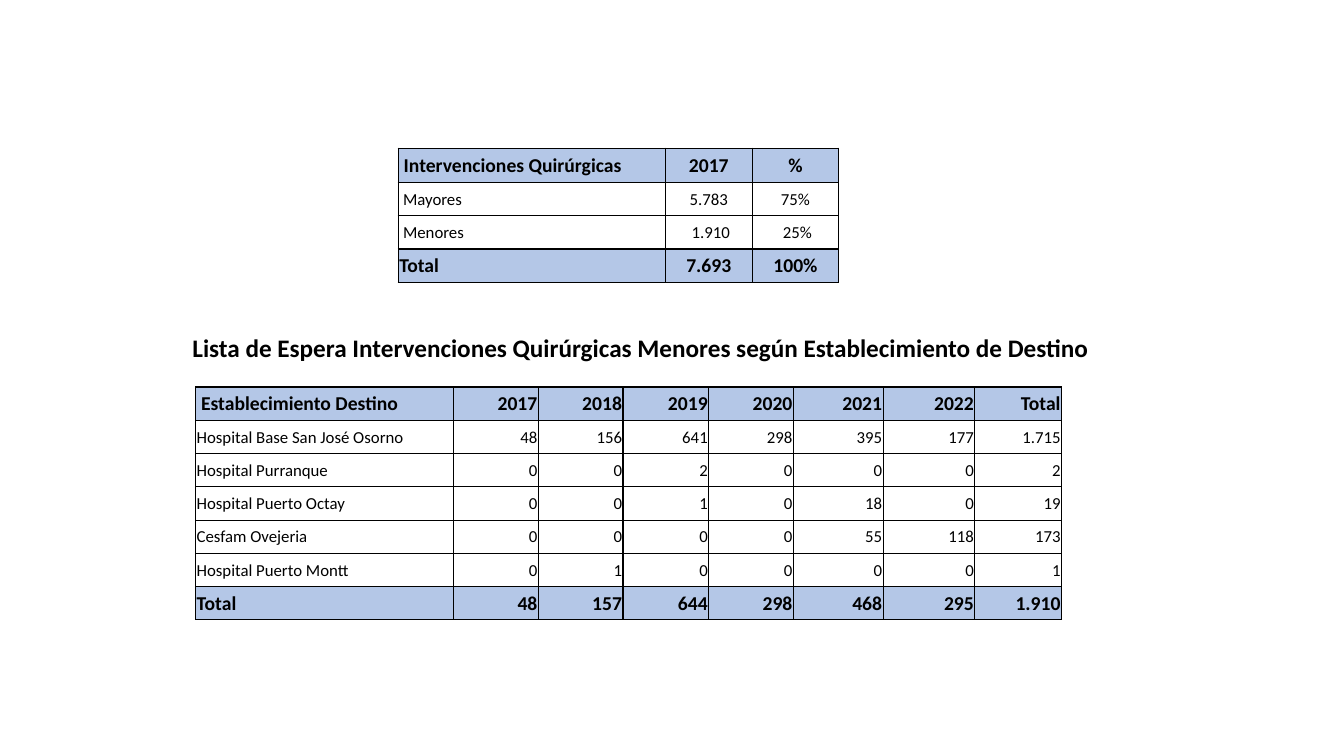
from dataclasses import dataclass

import pptx
import pptx.dml.color
import pptx.enum.text
import pptx.oxml
import pptx.oxml.ns
import pptx.slide
import pptx.table
import pptx.util
from pptx.util import Inches

BLACK = pptx.dml.color.RGBColor(0x00, 0x00, 0x00)
LIGHT_BLUE = pptx.dml.color.RGBColor(0xB4, 0xC7, 0xE7)
FONT = "Calibri"
ALIGN = pptx.enum.text.PP_ALIGN
ROW_HEIGHT = 0.33


@dataclass(frozen=True)
class SummaryTable:
    left: float
    top: float
    column_widths: list[float]
    header_height: float
    figure_align: pptx.enum.text.PP_ALIGN
    rows: list[list[str]]


INTERVENTIONS = SummaryTable(
    left=3.95,
    top=1.47,
    column_widths=[2.65, 0.86, 0.86],
    header_height=0.34,
    figure_align=ALIGN.CENTER,
    rows=[
        [" Intervenciones Quirúrgicas", "2017", "%"],
        [" Mayores", "5.783", "75%"],
        [" Menores", " 1.910", " 25%"],
        ["Total", "7.693", "100%"],
    ],
)

WAITING_LIST = SummaryTable(
    left=1.94,
    top=3.84,
    column_widths=[2.56, 0.84, 0.84, 0.85, 0.84, 0.89, 0.91, 0.86],
    header_height=ROW_HEIGHT,
    figure_align=ALIGN.RIGHT,
    rows=[
        [" Establecimiento Destino", "2017", "2018", "2019", "2020", "2021", "2022", "Total"],
        ["Hospital Base San José Osorno", "48", "156", "641", "298", "395", "177", "1.715"],
        ["Hospital Purranque", "0", "0", "2", "0", "0", "0", "2"],
        ["Hospital Puerto Octay", "0", "0", "1", "0", "18", "0", "19"],
        ["Cesfam Ovejeria", "0", "0", "0", "0", "55", "118", "173"],
        ["Hospital Puerto Montt", "0", "1", "0", "0", "0", "0", "1"],
        ["Total", "48", "157", "644", "298", "468", "295", "1.910"],
    ],
)


def style_font(font: pptx.text.text.Font, size: float, bold: bool) -> None:
    font.name = FONT
    font.size = pptx.util.Pt(size)
    font.bold = bold
    font.color.rgb = BLACK


def add_borders(cell: pptx.table._Cell) -> None:
    cell_properties = cell._tc.get_or_add_tcPr()
    for side in ("lnL", "lnR", "lnT", "lnB"):
        cell_properties.append(pptx.oxml.parse_xml(
            f'<a:{side} {pptx.oxml.ns.nsdecls("a")} w="{pptx.util.Pt(1)}">'
            f'<a:solidFill><a:srgbClr val="{BLACK}"/></a:solidFill></a:{side}>'
        ))


def fill_cell(cell: pptx.table._Cell, text: str, align: pptx.enum.text.PP_ALIGN,
              emphasized: bool) -> None:
    cell.margin_left = cell.margin_right = cell.margin_top = Inches(0.01)
    cell.margin_bottom = 0
    cell.vertical_anchor = pptx.enum.text.MSO_ANCHOR.MIDDLE
    add_borders(cell)
    if emphasized:
        cell.fill.solid()
        cell.fill.fore_color.rgb = LIGHT_BLUE
    else:
        cell.fill.background()
    paragraph = cell.text_frame.paragraphs[0]
    paragraph.text = text
    paragraph.alignment = align
    style_font(paragraph.runs[0].font, 14 if emphasized else 12, emphasized)


def add_summary_table(slide: pptx.slide.Slide, summary: SummaryTable) -> None:
    last_row = len(summary.rows) - 1
    heights = [summary.header_height] + [ROW_HEIGHT] * last_row
    table = slide.shapes.add_table(
        len(summary.rows), len(summary.column_widths),
        Inches(summary.left), Inches(summary.top),
        Inches(sum(summary.column_widths)), Inches(sum(heights)),
    ).table
    table.first_row = table.horz_banding = False
    for column, width in zip(table.columns, summary.column_widths):
        column.width = Inches(width)
    for row_index, (row, height) in enumerate(zip(table.rows, heights)):
        row.height = Inches(height)
        for column_index, text in enumerate(summary.rows[row_index]):
            align = summary.figure_align if column_index else ALIGN.LEFT
            fill_cell(row.cells[column_index], text, align, row_index in (0, last_row))


def add_waiting_list_heading(slide: pptx.slide.Slide) -> None:
    heading = slide.shapes.add_textbox(
        Inches(1.81), Inches(3.25), Inches(9.15), Inches(0.4)).text_frame
    heading.word_wrap = False
    heading.auto_size = pptx.enum.text.MSO_AUTO_SIZE.SHAPE_TO_FIT_TEXT
    heading.text = ("Lista de Espera Intervenciones Quirúrgicas Menores "
                    "según Establecimiento de Destino")
    style_font(heading.paragraphs[0].runs[0].font, 18, True)


def main() -> None:
    presentation = pptx.Presentation()
    presentation.slide_width = Inches(13.33)
    presentation.slide_height = Inches(7.5)
    slide = presentation.slides.add_slide(presentation.slide_layouts[6])
    for summary in (INTERVENTIONS, WAITING_LIST):
        add_summary_table(slide, summary)
    add_waiting_list_heading(slide)
    presentation.save("out.pptx")


if __name__ == "__main__":
    main()
